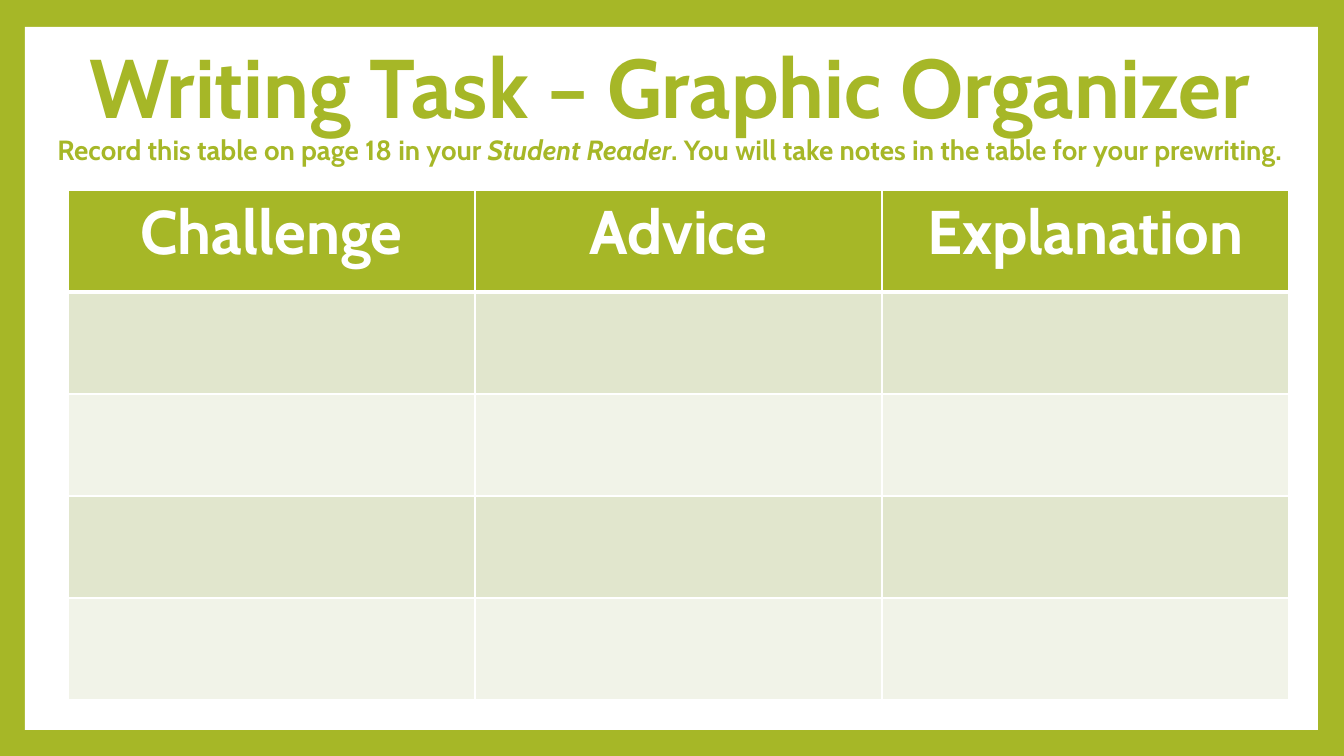
from pptx import Presentation
from pptx.dml.color import RGBColor
from pptx.enum.shapes import MSO_SHAPE as Shape
from pptx.enum.text import MSO_ANCHOR as Anchor, PP_ALIGN as Align
from pptx.oxml.ns import qn
from pptx.util import Pt
from lxml.etree import SubElement

TITLE = "Writing Task – Graphic Organizer"
INSTRUCTION = [
    ("Record this table on page 18 in your ", False),
    ("Student Reader", True),
    (". You will take notes in the table for your prewriting.", False),
]
HEADINGS = ["Challenge", "Advice", "Explanation"]
NOTE_ROWS = 4

COLORS = {"green": "A6B727", "white": "FFFFFF", "dark_band": "E1E6CD", "light_band": "F1F3E8"}
FORMATS = {
    "title": {"name": "Cabin", "size": Pt(59.4), "bold": True},
    "instruction": {"name": "Cabin", "size": Pt(19.8), "bold": True},
    "heading": {"name": "Cabin", "size": Pt(44), "bold": True},
}
PAGE = (1344, 756)
PANEL = (25, 27, 1293, 703)
TITLE_BOX = (35, 25, 1269, 164)
TABLE_CORNER = (68, 190)
COLUMN_WIDTH, ROW_HEIGHT = 407, 102


def px(*lengths):
    return [round(length * 12192000 / 1344) for length in lengths]


def color(name):
    return RGBColor.from_string(COLORS[name])


def paint(fill, name):
    fill.solid()
    fill.fore_color.rgb = color(name)


def add_span(para, text, style, ink, italic=False):
    span = para.add_run()
    span.text = text
    for key, value in FORMATS[style].items():
        setattr(span.font, key, value)
    span.font.italic = italic
    span.font.color.rgb = color(ink)


def add_borders(cell, widths):
    properties = cell._tc.get_or_add_tcPr()
    for side, width in widths.items():
        line = SubElement(properties, qn(f"a:ln{side}"), w=str(Pt(width)))
        fill = SubElement(line, qn("a:solidFill"))
        SubElement(fill, qn("a:srgbClr"), val=COLORS["white"])


def add_title(page):
    box = page.shapes.add_textbox(*px(*TITLE_BOX))
    frame = box.text_frame
    frame.word_wrap = True
    frame.vertical_anchor = Anchor.MIDDLE
    para = frame.paragraphs[0]
    para.alignment = Align.CENTER
    para.line_spacing = 0.9
    add_span(para, TITLE, "title", "green")
    para.add_line_break()
    for text, italic in INSTRUCTION:
        add_span(para, text, "instruction", "green", italic)


def add_organizer(page):
    rows, columns = NOTE_ROWS + 1, len(HEADINGS)
    size = (columns * COLUMN_WIDTH, rows * ROW_HEIGHT)
    table = page.shapes.add_table(rows, columns, *px(*TABLE_CORNER, *size)).table
    for row in range(rows):
        band = "green" if row == 0 else "dark_band" if row % 2 else "light_band"
        for column in range(columns):
            cell = table.cell(row, column)
            top, bottom = 3 if row == 1 else 1, 3 if row == 0 else 1
            add_borders(cell, {"L": 1, "R": 1, "T": top, "B": bottom})
            paint(cell.fill, band)
    for column, heading in enumerate(HEADINGS):
        para = table.cell(0, column).text_frame.paragraphs[0]
        para.alignment = Align.CENTER
        add_span(para, heading, "heading", "white")


def main():
    deck = Presentation()
    deck.slide_width, deck.slide_height = px(*PAGE)
    page = deck.slides.add_slide(deck.slide_layouts[6])
    paint(page.background.fill, "green")
    panel = page.shapes.add_shape(Shape.RECTANGLE, *px(*PANEL))
    panel.shadow.inherit = False
    paint(panel.fill, "white")
    panel.line.fill.background()
    add_title(page)
    add_organizer(page)
    deck.save("out.pptx")


if __name__ == "__main__":
    main()
